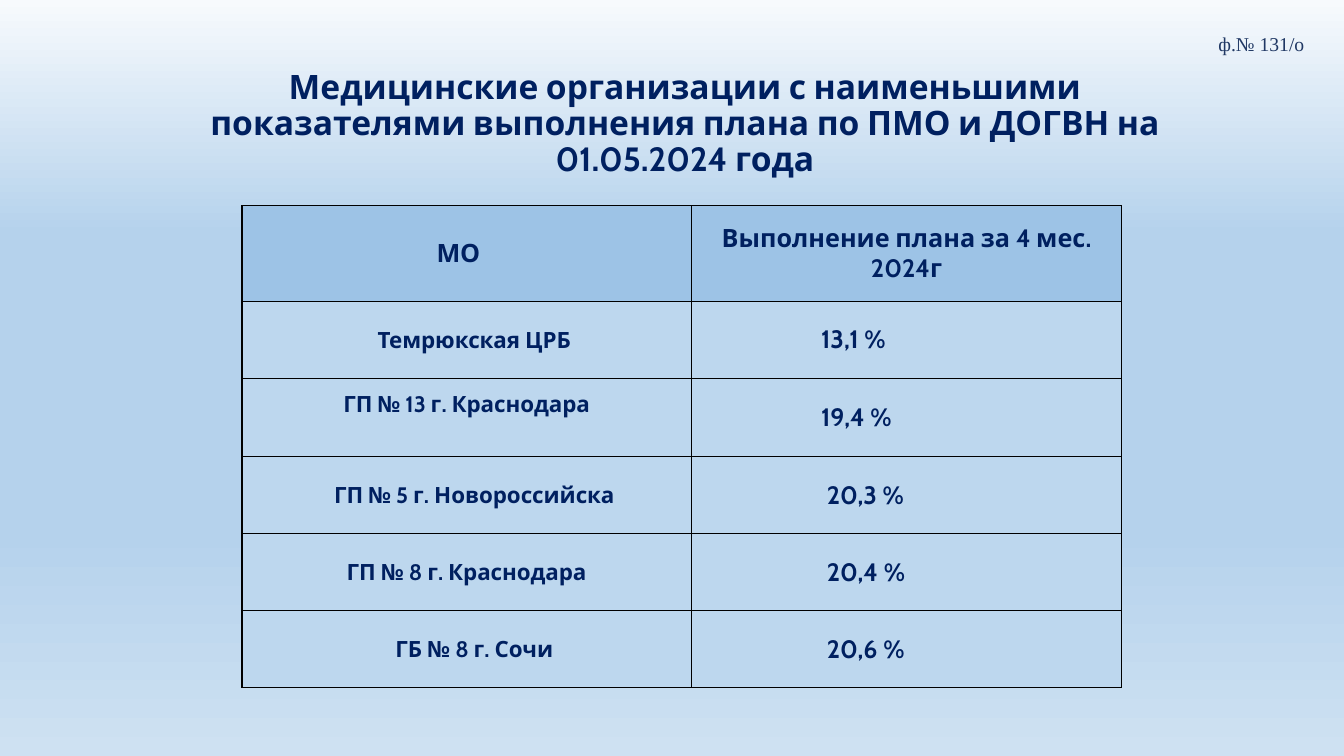
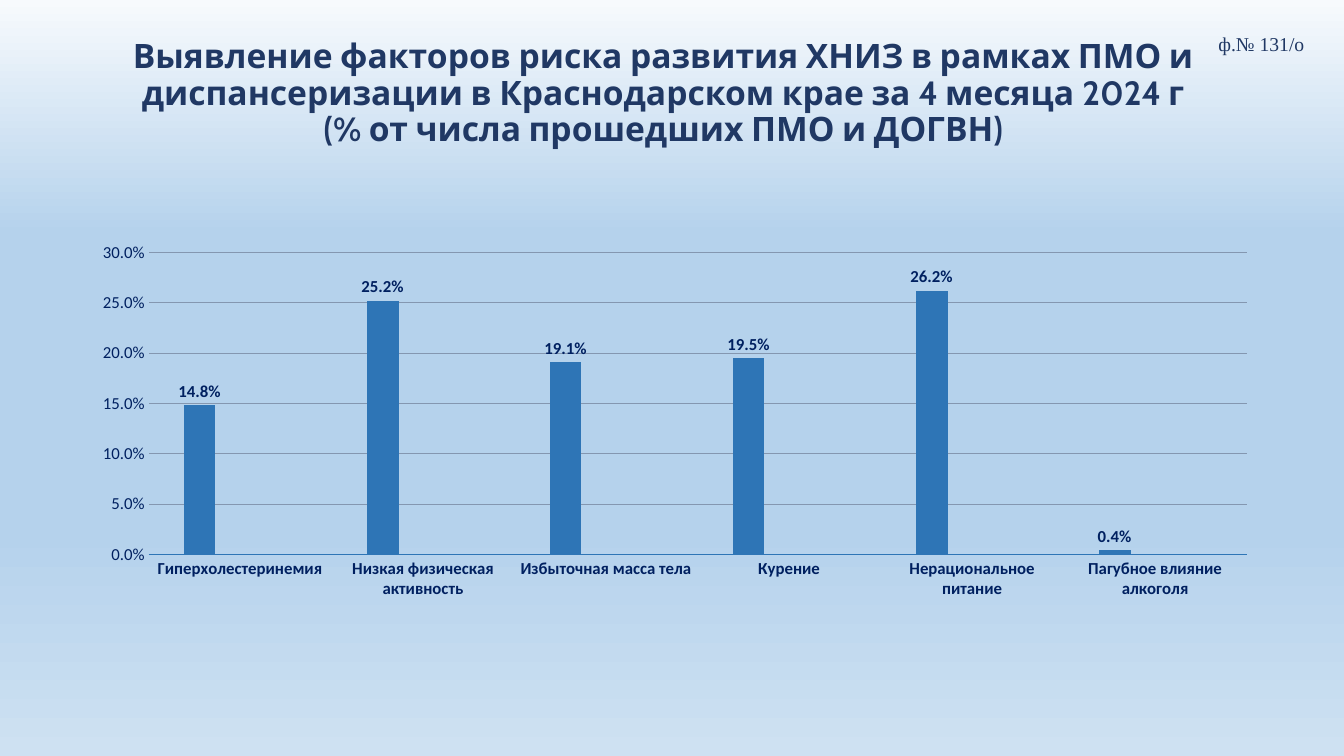
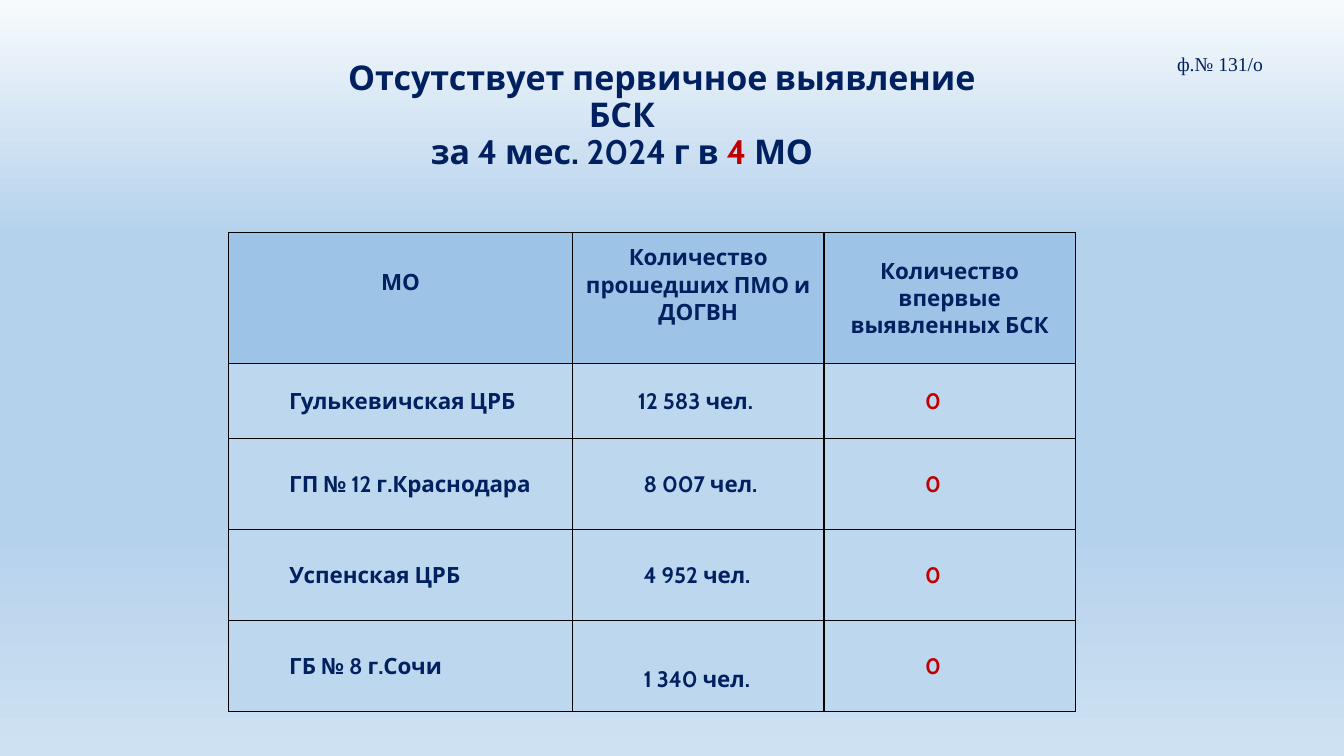
"""Builds three slides on check-up results: two tables and a column chart."""
from dataclasses import dataclass

from lxml import etree
from pptx import Presentation
from pptx.chart import data
from pptx.dml.color import RGBColor
from pptx.enum import chart as charts
from pptx.enum import text as texts
from pptx.oxml import ns
from pptx.util import Pt

NAVY = RGBColor(0x00, 0x20, 0x60)
SLATE = RGBColor(0x20, 0x38, 0x64)
RED = RGBColor(0xC0, 0x00, 0x00)
HEAD_FILL = RGBColor(0x9D, 0xC3, 0xE6)
BODY_FILL = RGBColor(0xBD, 0xD7, 0xEE)
BAR = RGBColor(0x2E, 0x75, 0xB6)
ORANGE = RGBColor(0xED, 0x7D, 0x31)
GREY = RGBColor(0xA5, 0xA5, 0xA5)
GRID = RGBColor(0x84, 0x97, 0xB0)
BLACK = RGBColor(0x00, 0x00, 0x00)
BACKDROP = (
    (0, RGBColor(0xF7, 0xFA, 0xFD)),
    (31, RGBColor(0xB5, 0xD2, 0xEC)),
    (70, RGBColor(0xB5, 0xD2, 0xEC)),
    (100, RGBColor(0xCE, 0xE1, 0xF2)),
)
TITLE_FONT = "Cabin"
CHART_FONT = "Calibri"
LABEL_FONT = "Times New Roman"
CENTER = texts.PP_ALIGN.CENTER
LEFT = texts.PP_ALIGN.LEFT


@dataclass
class Entry:
    """Text of one table cell and how it sits there."""
    text: str
    size: float = 16
    color: RGBColor = NAVY
    align: int = CENTER
    indent: float = 0
    left: float = 7.2
    right: float = 7.2
    top: float = 3.6
    bottom: float = 3.6


def add_child(parent, tag, **attributes):
    """Append a drawing element and return it."""
    child = etree.SubElement(parent, ns.qn(tag))
    for name, value in attributes.items():
        child.set(name, str(value))
    return child


def paint_master(deck):
    """Give the master the vertical gradient all slides share."""
    fill = deck.slide_master.background.fill
    fill.gradient()
    fill.gradient_angle = 270
    stops = deck.slide_master.element.find(".//" + ns.qn("p:bg") + "//" + ns.qn("a:gsLst"))
    for stop in list(stops):
        stops.remove(stop)
    for percent, color in BACKDROP:
        stop = add_child(stops, "a:gs", pos=percent * 1000)
        add_child(stop, "a:srgbClr", val=color)


def style_font(font, name, size, color, bold=False):
    """Set the look of a font."""
    font.name = name
    font.size = Pt(size)
    font.bold = bold
    font.color.rgb = color


def add_span(para, words, name, size, color, bold=False):
    """Add one run to a paragraph."""
    span = para.add_run()
    span.text = words
    style_font(span.font, name, size, color, bold)


def add_box(page, left, top, width, height):
    """Add a wrapping text box and return its frame."""
    frame = page.shapes.add_textbox(Pt(left), Pt(top), Pt(width), Pt(height)).text_frame
    frame.word_wrap = True
    return frame


def add_title(page, place, lines, size=24, indent=0, inset=7.2):
    """Add a centred bold title made of lines of coloured spans."""
    frame = add_box(page, *place)
    frame.vertical_anchor = texts.MSO_ANCHOR.MIDDLE
    frame.margin_left = frame.margin_right = Pt(inset)
    para = frame.paragraphs[0]
    para.alignment = CENTER
    para.line_spacing = 0.9
    if indent:
        para._p.get_or_add_pPr().set("indent", str(Pt(indent)))
    for number, line in enumerate(lines):
        if number:
            para.add_line_break()
        for words, color in line:
            add_span(para, words, TITLE_FONT, size, color, True)


def add_form_label(page, left=862.5, top=19.5, width=77, color=SLATE):
    """Add the number of the reporting form."""
    frame = add_box(page, left, top, width, 24.2)
    frame.auto_size = texts.MSO_AUTO_SIZE.SHAPE_TO_FIT_TEXT
    para = frame.paragraphs[0]
    para.alignment = CENTER
    add_span(para, "ф.№ 131/о", LABEL_FONT, 14, color)


def fill_cell(cell, entry, fill):
    """Write an entry into a bordered, filled cell."""
    properties = cell._tc.get_or_add_tcPr()
    for side in "LRTB":
        line = add_child(properties, "a:ln" + side, w=Pt(1))
        add_child(add_child(line, "a:solidFill"), "a:srgbClr", val=BLACK)
    cell.fill.solid()
    cell.fill.fore_color.rgb = fill
    cell.vertical_anchor = texts.MSO_ANCHOR.MIDDLE
    cell.margin_left, cell.margin_right = Pt(entry.left), Pt(entry.right)
    cell.margin_top, cell.margin_bottom = Pt(entry.top), Pt(entry.bottom)
    para = cell.text_frame.paragraphs[0]
    para.alignment = entry.align
    if entry.indent:
        para._p.get_or_add_pPr().set("marL", str(Pt(entry.indent)))
    add_span(para, entry.text, TITLE_FONT, entry.size, entry.color, True)


def add_grid(page, left, top, widths, heights, rows):
    """Add a table whose first row is the heading."""
    frame = page.shapes.add_table(
        len(rows), len(widths), Pt(left), Pt(top), Pt(sum(widths)), Pt(sum(heights)))
    table = frame.table
    table.first_row = table.horz_banding = False
    for column, width in zip(table.columns, widths):
        column.width = Pt(width)
    for number, (height, entries) in enumerate(zip(heights, rows)):
        table.rows[number].height = Pt(height)
        for place, entry in enumerate(entries):
            fill_cell(table.cell(number, place), entry, BODY_FILL if number else HEAD_FILL)


def add_risk_chart(page):
    """Add the column chart of risk factors."""
    source = data.CategoryChartData(number_format="0.0%")
    source.categories = [
        "Гиперхолестеринемия", "Низкая физическая активность", "Избыточная масса тела",
        "Курение", "Нерациональное питание", "Пагубное влияние алкоголя"]
    source.add_series("Series 1", (0.148, 0.252, 0.191, 0.195, 0.262, 0.004))
    source.add_series("Series 2", [None] * 6)
    source.add_series("Series 3", [None] * 6)
    chart = page.shapes.add_chart(
        charts.XL_CHART_TYPE.COLUMN_CLUSTERED,
        Pt(36), Pt(146.9), Pt(855.4), Pt(368.6), source).chart
    chart.has_legend = chart.has_title = False
    style_font(chart.font, CHART_FONT, 10, BLACK)
    plot = chart.plots[0]
    plot.vary_by_categories = False
    plot.gap_width, plot.overlap = 219, -27
    for series, color in zip(plot.series, (BAR, ORANGE, GREY)):
        series.format.fill.solid()
        series.format.fill.fore_color.rgb = color
    labels = plot.series[0].data_labels
    labels.show_value = True
    labels.position = charts.XL_LABEL_POSITION.OUTSIDE_END
    labels.number_format, labels.number_format_is_linked = "0.0%", False
    style_font(labels.font, CHART_FONT, 12, NAVY, True)
    style_axes(chart)
    place_plot(chart, x=0.082, y=0.091, w=0.917, h=0.585)


def style_axes(chart):
    """Set scale, lines and fonts of both axes."""
    for axis, bold in ((chart.category_axis, True), (chart.value_axis, False)):
        axis.major_tick_mark = axis.minor_tick_mark = charts.XL_TICK_MARK.NONE
        style_font(axis.tick_labels.font, CHART_FONT, 12, NAVY, bold)
    base = chart.category_axis.format.line
    base.color.rgb = BAR
    base.width = Pt(0.75)
    scale = chart.value_axis
    scale.minimum_scale, scale.maximum_scale, scale.major_unit = 0, 0.3, 0.05
    scale.format.line.fill.background()
    scale.tick_labels.number_format = "0.0%"
    scale.tick_labels.number_format_is_linked = False
    scale.has_major_gridlines = True
    scale.major_gridlines.format.line.color.rgb = GRID
    scale.major_gridlines.format.line.width = Pt(0.75)


def place_plot(chart, **shares):
    """Fix the inner plot area as shares of the chart."""
    area = chart.element.find(".//" + ns.qn("c:plotArea"))
    for old in area.findall(ns.qn("c:layout")):
        area.remove(old)
    layout = etree.Element(ns.qn("c:layout"))
    area.insert(0, layout)
    manual = add_child(layout, "c:manualLayout")
    add_child(manual, "c:layoutTarget", val="inner")
    for name in "xy":
        add_child(manual, f"c:{name}Mode", val="edge")
    for name, share in shares.items():
        add_child(manual, "c:" + name, val=share)


def build_plan_page(page):
    """Lowest plan fulfilment by organisation."""
    add_title(page, (116, 33.8, 746.6, 110.2), [[(
        "Медицинские организации с наименьшими показателями выполнения плана "
        "по ПМО и ДОГВН на 01.05.2024 года", NAVY)]])
    rows = [[Entry("МО", 18, right=19), Entry("Выполнение плана за 4 мес. 2024г", 18)]]
    for name, indent, bottom, share, offset in (
            ("Темрюкская ЦРБ", 11, 0, "13,1 %", 85.5),
            ("ГП № 13 г. Краснодара", 0, 19, "19,4 %", 85.5),
            ("ГП № 5 г. Новороссийска", 11, 0, "20,3 %", 89.5),
            ("ГП № 8 г. Краснодара", 0, 0, "20,4 %", 89.5),
            ("ГБ № 8 г. Сочи", 11, 0, "20,6 %", 89.5)):
        rows.append([
            Entry(name, indent=indent, left=0.7, right=0.7, top=0.7, bottom=bottom),
            Entry(share, 18, align=LEFT, indent=offset)])
    add_grid(page, 172.8, 146.9, (321.1, 307.4), (68.4, 55, 56, 55, 55, 55), rows)
    add_form_label(page)


def build_risk_page(page):
    """Risk factors found."""
    add_title(page, (59.8, 15.1, 828, 104.4), [
        [("Выявление факторов риска развития ХНИЗ в рамках ПМО и диспансеризации "
          "в Краснодарском крае за 4 месяца 2024 г", SLATE)],
        [("(% от числа прошедших ПМО и ДОГВН)", SLATE)]])
    add_risk_chart(page)
    add_form_label(page)


def build_absence_page(page):
    """Organisations with no first detections."""
    add_title(page, (158.4, 52.6, 571.7, 61.2), [
        [("Отсутствует первичное выявление БСК", NAVY)],
        [("за 4 мес. 2024 г в ", NAVY), ("4", RED), (" МО", NAVY)]],
        size=24.3, indent=57, inset=21)
    rows = [[
        Entry("МО", bottom=26),
        Entry("Количество прошедших ПМО и ДОГВН", bottom=22.5),
        Entry("Количество впервые выявленных БСК")]]
    for name, people, offset, top in (
            ("Гулькевичская ЦРБ", "12 583 чел.", 39.5, 3.6),
            ("ГП № 12 г.Краснодара", "8 007 чел.", 43.5, 3.6),
            ("Успенская ЦРБ", "4 952 чел.", 43.5, 3.6),
            ("ГБ № 8 г.Сочи", "1 340 чел.", 43.5, 22.5)):
        rows.append([
            Entry(name, align=LEFT, indent=36),
            Entry(people, align=LEFT, indent=offset, top=top),
            Entry("0", color=RED, align=LEFT, indent=65)])
    add_grid(page, 163.4, 166.3, (245.6, 179.6, 179.6), (93.5, 53.5, 65, 65, 65), rows)
    add_form_label(page, 820, 33.8, 103, NAVY)


def main():
    """Build and save the deck."""
    deck = Presentation()
    deck.slide_width, deck.slide_height = Pt(960), Pt(540)
    paint_master(deck)
    for build in (build_plan_page, build_risk_page, build_absence_page):
        build(deck.slides.add_slide(deck.slide_layouts[6]))
    deck.save("out.pptx")


if __name__ == "__main__":
    main()
